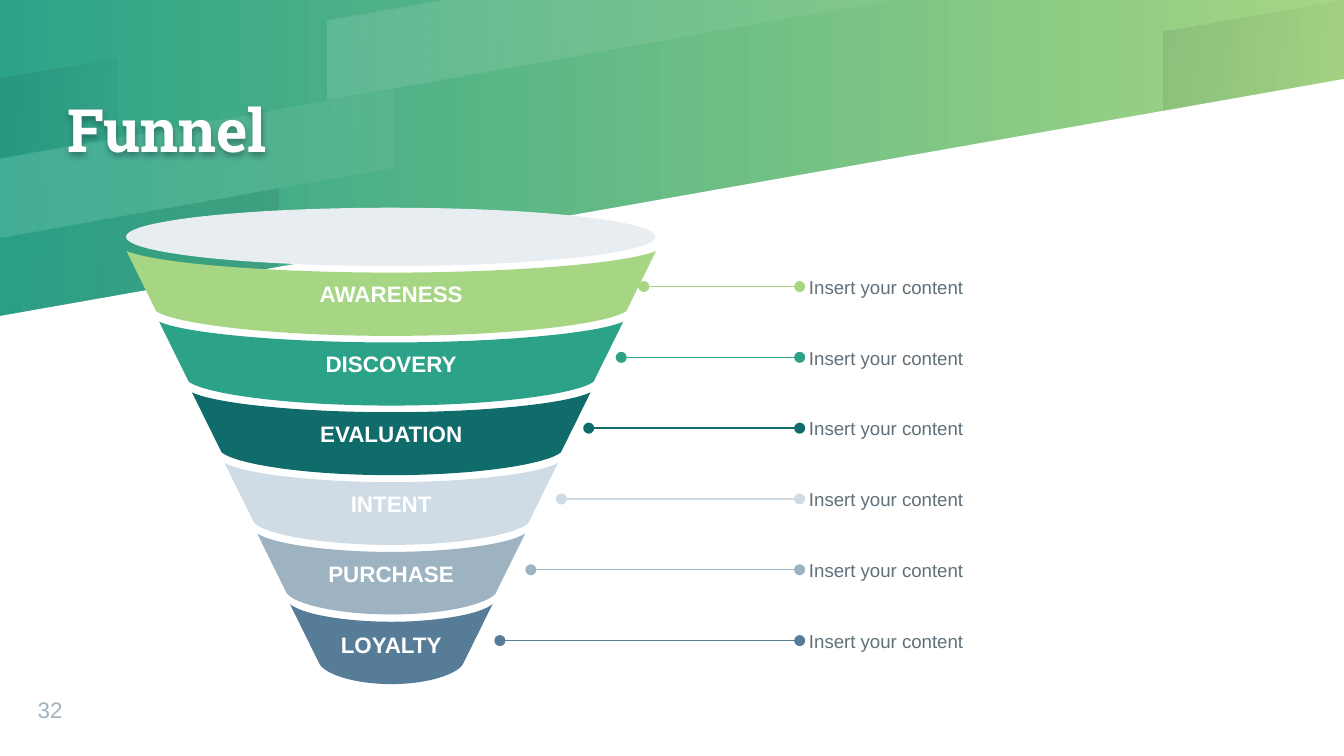
from lxml import etree
from pptx import Presentation
from pptx.dml.color import RGBColor
from pptx.enum.shapes import MSO_CONNECTOR, MSO_SHAPE
from pptx.enum.text import MSO_ANCHOR, PP_ALIGN
from pptx.oxml.ns import qn
from pptx.util import Pt

STRAIGHT, ELLIPSE = MSO_CONNECTOR.STRAIGHT, MSO_SHAPE.OVAL
MIDDLE, BOTTOM = MSO_ANCHOR.MIDDLE, MSO_ANCHOR.BOTTOM
LEFT, CENTER = PP_ALIGN.LEFT, PP_ALIGN.CENTER

# Content: stage, colour, start of its leader line
STAGES = [
    ("AWARENESS", "A6D683", 344.9),
    ("DISCOVERY", "2CA388", 332.8),
    ("EVALUATION", "106B6B", 315.4),
    ("INTENT", "CFDCE6", 300.8),
    ("PURCHASE", "9EB3C2", 284.4),
    ("LOYALTY", "577C97", 267.8),
]
NOTE = "Insert your content"

# Backdrop ribbons: corners, colour, opacity at both ends in percent
RIBBONS = [
    ([(239, 0), (175.5, 11), (175.5, 53.5), (479, 0)], "FFFFFF", (12, 5)),
    ([(0, 42), (0, 84.5), (63, 73.3), (63, 31)], "00001A", (8, 2)),
    ([(0, 127), (0, 169.3), (149.3, 143), (149.3, 100.7)], "00001A", (2, 8)),
    ([(720, 0), (719, 0), (623.3, 17), (623.3, 59.3), (720, 42.3)], "00001A", (8, 2)),
    ([(0, 84.5), (0, 127), (211.3, 89.5), (211.3, 47.2)], "FFFFFF", (12, 5)),
]
PAPER = [(0, 405), (720, 405), (720, 42.3), (0, 169.3)]

# Text formats
TITLE = {"name": "Roboto Slab", "size": Pt(32), "bold": True}
STAGE = {"name": "Arial", "size": Pt(12), "bold": True}
PAGE = {"name": "Arial", "size": Pt(12)}
BODY = {"name": "Arial", "size": Pt(10)}

# Funnel geometry
AXIS = 209.6
RIM_HALF, RIM_STEP = 141.8, 17.5
SIDE_INSET, SIDE_DROP = 15.9, 32.2


def rgb(hex_colour):
    return RGBColor.from_string(hex_colour)


def write(shape, words, style, colour, align=LEFT, anchor=MIDDLE, inset=0):
    frame = shape.text_frame
    settings = {"word_wrap": True, "vertical_anchor": anchor}
    settings.update({f"margin_{side}": Pt(inset) for side in ("left", "right", "top", "bottom")})
    for key, value in settings.items():
        setattr(frame, key, value)
    paragraph = frame.paragraphs[0]
    paragraph.alignment = align
    run = paragraph.add_run()
    run.text = words
    for key, value in style.items():
        setattr(run.font, key, value)
    run.font.color.rgb = rgb(colour)


def text_box(slide, box, *args, **kwargs):
    shape = slide.shapes.add_textbox(*map(Pt, box))
    write(shape, *args, **kwargs)
    return shape


def set_gradient(fill, colours, angle):
    fill.gradient()
    fill.gradient_angle = angle
    for stop, colour in zip(fill.gradient_stops, colours):
        stop.color.rgb = rgb(colour)


def paint(shape, colour):
    shape.fill.solid()
    shape.fill.fore_color.rgb = rgb(colour)
    shape.line.fill.background()
    shape.shadow.inherit = False


def outline(slide, points, colour):
    corners = [(Pt(x), Pt(y)) for x, y in points]
    builder = slide.shapes.build_freeform(*corners[0])
    builder.add_line_segments(corners[1:], close=True)
    shape = builder.convert_to_shape()
    paint(shape, colour)
    return shape


def arc(half, edge_y, middle_y, reach, bend):
    """Left to right: two mirrored Bezier halves as end and control points."""
    shoulder = middle_y + bend * (edge_y - middle_y)
    right = [(reach[0] * half, middle_y), (reach[1] * half, shoulder), (half, edge_y)]
    left = [(-x, y) for x, y in right[::-1]]
    return [(AXIS + x, y) for x, y in left + [(0, middle_y)] + right]


def bend_sides(shape):
    """Turn each three control segments into one curve, keeping the straight sides."""
    segments = list(shape._element.iter(qn("a:lnTo")))
    for first in (1, 4, 8, 11):
        curve = etree.Element(qn("a:cubicBezTo"))
        segments[first].addprevious(curve)
        for segment in segments[first:first + 3]:
            curve.append(segment[0])
            segment.getparent().remove(segment)


def leader(slide, x1, x2, y, colour):
    line = slide.shapes.add_connector(STRAIGHT, Pt(x1), Pt(y), Pt(x2), Pt(y))
    line.line.color.rgb = rgb(colour)
    line.line.width = Pt(0.75)
    stroke = line.line._get_or_add_ln()
    for end in ("a:headEnd", "a:tailEnd"):
        etree.SubElement(stroke, qn(end), type="oval")
    etree.SubElement(line._element.spPr, qn("a:effectLst"))


def main():
    deck = Presentation()
    deck.slide_width, deck.slide_height = Pt(720), Pt(405)
    slide = deck.slides.add_slide(deck.slide_layouts[6])

    # Backdrop
    set_gradient(slide.background.fill, ("2CA388", "A6D683"), 0)
    outline(slide, PAPER, "FFFFFF")
    for corners, colour, opacities in RIBBONS:
        ribbon = outline(slide, corners, colour)
        set_gradient(ribbon.fill, (colour, colour), 350)
        stops = ribbon._element.spPr.iter(qn("a:srgbClr"))
        for stop, opacity in zip(stops, opacities):
            etree.SubElement(stop, qn("a:alpha"), val=str(opacity * 1000))

    # Title with soft shadow, and page number
    title = text_box(slide, (36, 0, 432, 142.5), "Funnel", TITLE, "FFFFFF")
    title.text_frame.paragraphs[0].line_spacing = 0.9
    effects = etree.SubElement(title._element.spPr, qn("a:effectLst"))
    shadow = etree.SubElement(effects, qn("a:outerShdw"), blurRad="38100",
                              dist="19050", dir="5400000", algn="bl", rotWithShape="0")
    shade = etree.SubElement(shadow, qn("a:srgbClr"), val="00001A")
    etree.SubElement(shade, qn("a:alpha"), val="30000")
    text_box(slide, (20.2, 368, 38, 19.4), "32", PAGE, "9EB3C2", anchor=BOTTOM)

    # Funnel bands with their leader lines and notes
    for row, (stage, colour, leader_start) in enumerate(STAGES):
        half = RIM_HALF - RIM_STEP * row
        edge = 134.6 + 37.8 * row
        top = arc(half, edge, 146.1 + 37.4 * row, (0.42, 0.87), 0.38)
        base = arc(half - SIDE_INSET, edge + SIDE_DROP, 180 + 37.3 * row, (0.52, 0.92), 0.5)
        band = outline(slide, top[:1] + base + top[:0:-1] + top[:1], colour)
        bend_sides(band)
        write(band, stage, STAGE, "FFFFFF", align=CENTER, inset=3)

        level = 153.5 + 37.94 * row
        leader(slide, leader_start, 428.4, level, colour)
        text_box(slide, (433.4, level - 13.6, 219.6, 27.4), NOTE, BODY, "60707A")

    # Funnel mouth
    mouth = slide.shapes.add_shape(ELLIPSE, *map(Pt, (67.5, 111.3, 2 * RIM_HALF, 31.2)))
    paint(mouth, "E8EDF1")

    deck.save("out.pptx")


if __name__ == "__main__":
    main()
